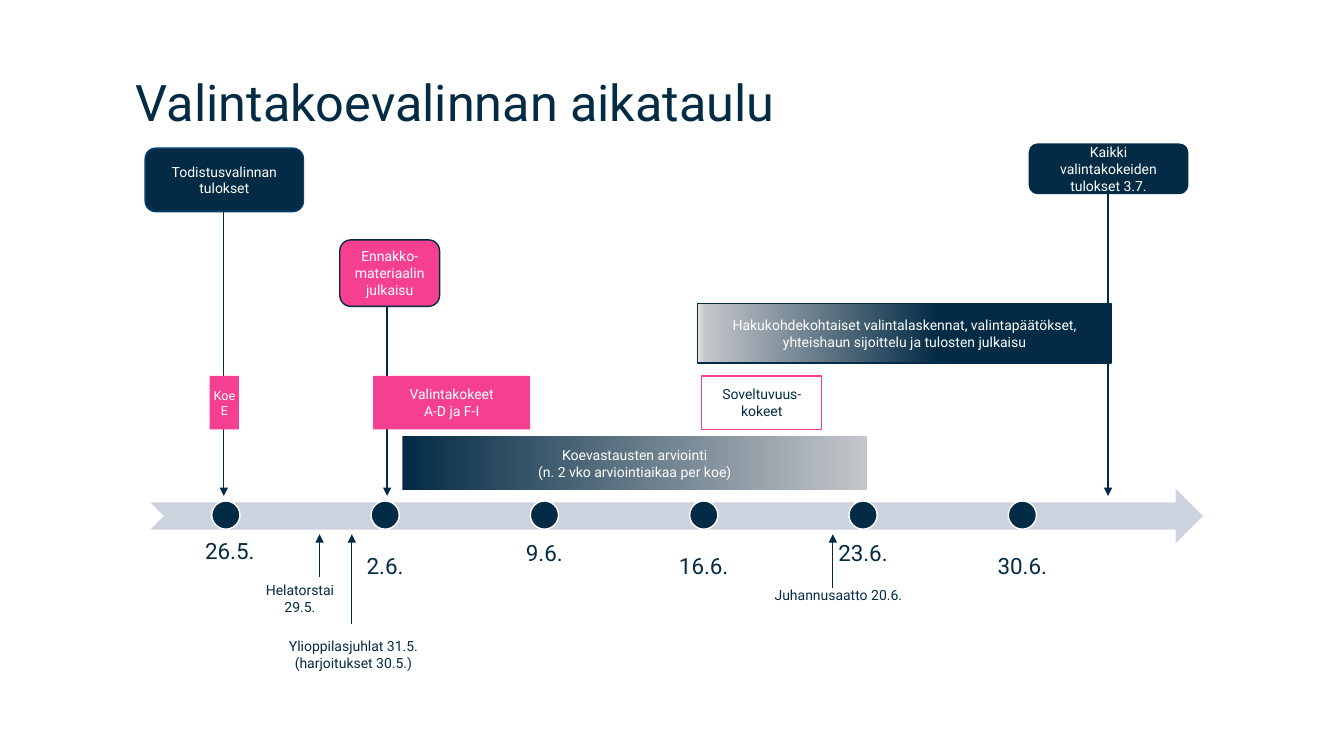
import copy
import pptx
import pptx.dml.color
import pptx.enum.shapes
import pptx.enum.text
import pptx.oxml.ns
import pptx.util
from lxml import etree

RGB = pptx.dml.color.RGBColor
SHAPE = pptx.enum.shapes.MSO_SHAPE
ANCHOR = pptx.enum.text.MSO_ANCHOR
ALIGN = pptx.enum.text.PP_ALIGN
qn = pptx.oxml.ns.qn

NAVY = RGB(0x03, 0x2B, 0x45)
TITLE_NAVY = RGB(0x03, 0x2B, 0x44)
BLUE = RGB(0x00, 0x43, 0x73)
PINK = RGB(0xF5, 0x40, 0x92)
WHITE = RGB(0xFF, 0xFF, 0xFF)
BAND = RGB(0xCC, 0xD2, 0xDE)
GREY = RGB(0xC4, 0xC6, 0xCA)
PALE = RGB(0xE3, 0xE3, 0xE5)

FONT = "Roboto"
CELL = pptx.util.Inches(1)  # one grid column or row
WEEK = 1.58  # columns between two dates
DOT = 0.28


def cells(*counts):
    return [int(count * CELL) for count in counts]


def inside(region, x, y, width, height):
    """Turn a place within a region into a place on the slide."""
    return region[0] + x, region[1] + y, width, height


def write(shape, lines, size, color, align=ALIGN.CENTER, anchor=ANCHOR.MIDDLE,
          insets=(0.1, 0.05), spacing=None):
    frame = shape.text_frame
    frame.word_wrap = True
    frame.vertical_anchor = anchor
    frame.margin_left = frame.margin_right = cells(insets[0])[0]
    frame.margin_top = frame.margin_bottom = cells(insets[1])[0]
    for index, line in enumerate(lines):
        paragraph = frame.add_paragraph() if index else frame.paragraphs[0]
        paragraph.alignment = align
        paragraph.line_spacing = spacing
        run = paragraph.add_run()
        run.text = line
        run.font.size = pptx.util.Pt(size)
        run.font.name = FONT
        run.font.color.rgb = color


def add_box(slide, kind, place, fill=None, line=None):
    box = slide.shapes.add_shape(kind, *cells(*place))
    box.shadow.inherit = False
    if fill is None:
        box.fill.background()
    elif isinstance(fill, RGB):
        box.fill.solid()
        box.fill.fore_color.rgb = fill
    else:
        fade(box, *fill)
    if line is None:
        box.line.fill.background()
    else:
        box.line.color.rgb = line
        box.line.width = pptx.util.Pt(1)
    return box


def fade(box, angle, stops):
    """Fill a box with a linear gradient of three stops."""
    box.fill.gradient()
    box.fill.gradient_angle = angle
    stop_list = box.fill._xPr.find(".//" + qn("a:gsLst"))
    stop_list.append(copy.deepcopy(stop_list[0]))
    for stop, (position, color) in zip(box.fill.gradient_stops, stops):
        stop.position = position
        stop.color.rgb = color


def add_arrow(slide, x, start, end, weight):
    """Draw a vertical arrow from start to end."""
    arrow = slide.shapes.add_connector(
        pptx.enum.shapes.MSO_CONNECTOR.STRAIGHT, *cells(x, start, x, end))
    arrow.line.color.rgb = NAVY
    arrow.line.width = pptx.util.Pt(weight)
    etree.SubElement(arrow.line._get_or_add_ln(), qn("a:tailEnd"), type="triangle")
    etree.SubElement(arrow._element.spPr, qn("a:effectLst"))


def add_title(slide, region):
    title = slide.shapes.add_textbox(*cells(*region))
    write(title, ["Valintakoevalinnan aikataulu"], 36, TITLE_NAVY,
          ALIGN.LEFT, ANCHOR.BOTTOM, spacing=0.9)


def add_date_axis(slide, region):
    add_box(slide, SHAPE.NOTCHED_RIGHT_ARROW, region, BAND)
    width, height, first_dot = 1.5, 1.11, 0.61
    dates = [("26.5.", 0.04, -0.24, ANCHOR.BOTTOM), ("2.6.", 0, 0.54, ANCHOR.TOP),
             ("9.6.", 0, -0.22, ANCHOR.BOTTOM), ("16.6.", 0, 0.54, ANCHOR.TOP),
             ("23.6.", 0, -0.22, ANCHOR.BOTTOM), ("30.6.", 0, 0.54, ANCHOR.TOP)]
    for week, (date, shift, y, anchor) in enumerate(dates):
        x = first_dot + week * WEEK
        place = inside(region, x + (DOT - width) / 2 + shift, y, width, height)
        label = slide.shapes.add_textbox(*cells(*place))
        write(label, [date], 16, NAVY, anchor=anchor, insets=(0.12, 0.12), spacing=0.9)
        add_box(slide, SHAPE.OVAL, inside(region, x, 0.12, DOT, DOT), NAVY, WHITE)


def add_milestones(slide, region):
    """Place the rounded boxes whose arrows reach down to the axis."""
    milestones = [
        ("Todistusvalinnan tulokset", (0, 0.04, 1.57, 0.63), 0.78, NAVY, BLUE),
        ("Ennakko-materiaalin julkaisu", (1.93, 0.95, 0.99, 0.66), 0.47, PINK, NAVY),
        ("Kaikki valintakokeiden tulokset 3.7.", (8.77, 0, 1.57, 0.49), 0.78, NAVY, NAVY),
    ]
    for text, spot, stem, fill, line in milestones:
        left, top, width, height = inside(region, *spot)
        add_arrow(slide, left + stem, top + height, region[1] + region[3], 1)
        box = add_box(slide, SHAPE.ROUNDED_RECTANGLE, (left, top, width, height), fill, line)
        write(box, [text], 10, WHITE)


def add_phases(slide, region):
    """Place the bars that show how long each phase lasts."""
    publishing = (180, [(0.42, NAVY), (0.98, GREY), (1, PALE)])
    grading = (0, [(0, NAVY), (1, GREY), (1, PALE)])
    exam_row, bar = 0.72, 0.53
    phases = [
        (["Soveltuvuus-kokeet"], (4.88, exam_row, 1.19, bar), None, PINK, NAVY),
        (["Hakukohdekohtaiset valintalaskennat, valintapäätökset, "
          "yhteishaun sijoittelu ja tulosten julkaisu"],
         (4.84, 0, 4.1, 0.59), publishing, NAVY, WHITE),
        (["Valintakokeet", "A-D ja F-I"], (1.62, exam_row, 1.56, bar), PINK, None, WHITE),
        (["Koevastausten arviointi", "(n. 2 vko arviointiaikaa per koe)"],
         (1.91, 1.32, 4.61, bar), grading, None, WHITE),
    ]
    for lines, spot, fill, line, color in phases:
        box = add_box(slide, SHAPE.RECTANGLE, inside(region, *spot), fill, line)
        write(box, lines, 10, color)
    exam_e = add_box(slide, SHAPE.RECTANGLE, inside(region, 0, exam_row, 0.29, bar), PINK)
    write(exam_e, ["Koe E"], 9, WHITE, insets=(0, 0.05))


def add_holidays(slide, region):
    """Place the notes whose arrows point up at the axis."""
    holidays = [
        (["Juhannusaatto 20.6."], (5.03, 0.44, 1.57, 0.33), 5.76, 0.53),
        (["Helatorstai", "29.5."], (0, 0.47, 0.95, 0.33), 0.67, 0.42),
        (["Ylioppilasjuhlat 31.5.", "(harjoitukset 30.5.)"],
         (0.22, 0.96, 1.57, 0.47), 0.99, 0.89),
    ]
    for lines, spot, stem, start in holidays:
        note = add_box(slide, SHAPE.ROUNDED_RECTANGLE, inside(region, *spot))
        write(note, lines, 10, NAVY)
        add_arrow(slide, region[0] + stem, region[1] + start, region[1], 0.75)


def main():
    deck = pptx.Presentation()
    deck.slide_width, deck.slide_height = cells(13.33, 7.5)
    slide = deck.slides.add_slide(deck.slide_layouts[6])
    add_date_axis(slide, (1.49, 4.85, 10.44, 0.54))
    add_title(slide, (1.25, 0.4, 10.83, 0.96))
    add_milestones(slide, (1.44, 1.43, 10.34, 3.49))
    add_phases(slide, (2.08, 3.01, 8.94, 1.85))
    add_holidays(slide, (2.5, 5.3, 6.6, 1.43))
    deck.save("out.pptx")


if __name__ == "__main__":
    main()
